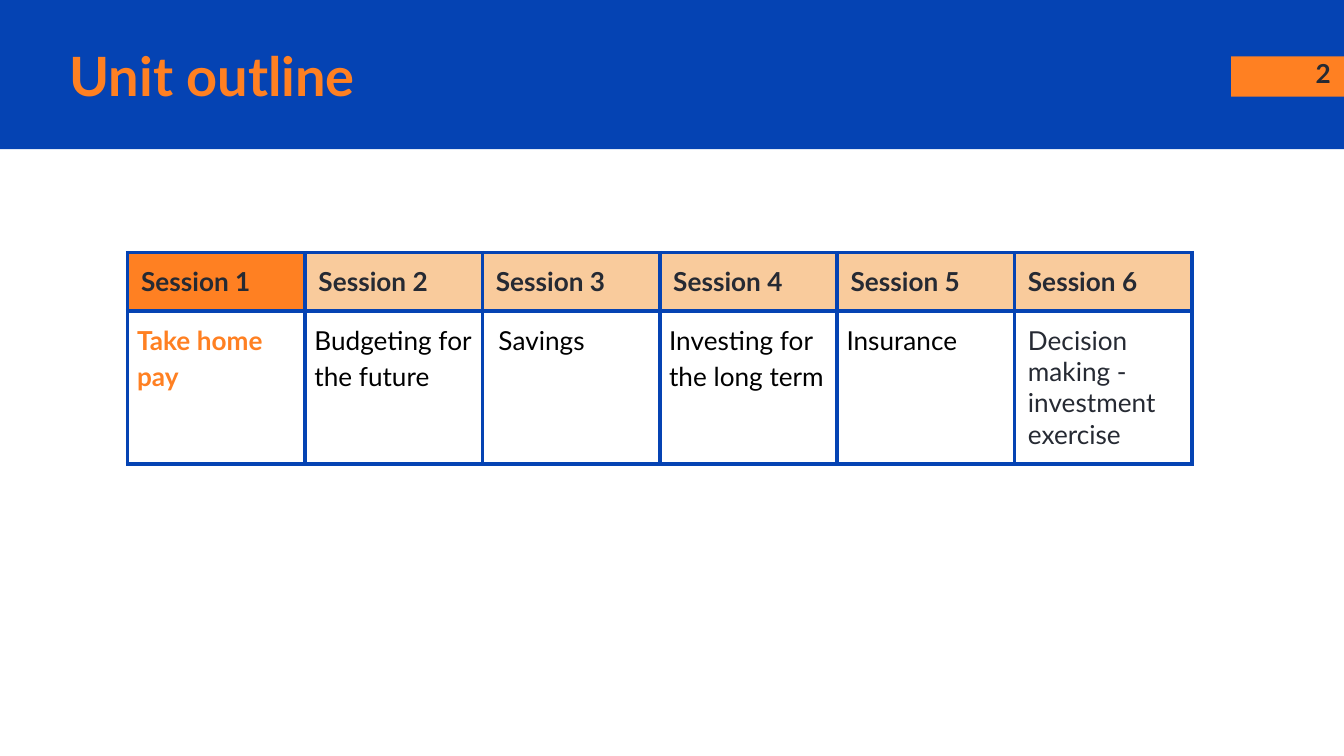
from dataclasses import dataclass

from lxml.etree import SubElement
from pptx import Presentation
from pptx.dml.color import RGBColor
from pptx.enum.shapes import MSO_SHAPE
from pptx.enum.text import MSO_ANCHOR, PP_ALIGN
from pptx.oxml.ns import qn
from pptx.util import Inches, Pt

WIDTH = 10
HEIGHT = WIDTH * 9 / 16
BLUE, ORANGE, PEACH, WHITE = "0543B3", "FF8022", "F9CB9C", "FFFFFF"
INK, BLACK = "262A33", "000000"
COLUMN_WIDTH, ROW_HEIGHTS = 1.32, (0.43, 1.14)
TABLE_LEFT, TABLE_TOP = 0.95, 1.88


@dataclass
class Session:
    topic: str
    color: str = BLACK
    header_fill: str = PEACH
    bold: bool = False
    inset: float = 0.07
    indent: float = 0
    spacing: float = 1.15


SESSIONS = [
    Session("Take home pay", ORANGE, ORANGE, bold=True),
    Session("Budgeting for the future"),
    Session("Savings", indent=0.05),
    Session("Investing for the long term"),
    Session("Insurance"),
    Session("Decision making - investment exercise", INK, inset=0.1, spacing=1),
]


def rgb(color: str) -> RGBColor:
    return RGBColor.from_string(color)


def write(holder, text: str, size: float, color: str, bold: bool = True,
          inset: float = 0.1, indent: float = 0, spacing: float = 1,
          align=PP_ALIGN.LEFT) -> None:
    """Put one styled paragraph into a text box or a table cell."""
    frame = holder.text_frame
    frame.text = text
    frame.word_wrap = True
    margins = holder if hasattr(holder, "margin_left") else frame
    margins.margin_left = Inches(inset + indent)
    margins.margin_right = margins.margin_top = margins.margin_bottom = Inches(inset)
    paragraph = frame.paragraphs[0]
    paragraph.alignment = align
    paragraph.line_spacing = spacing
    font = paragraph.runs[0].font
    font.name, font.size, font.bold = "Lato", Pt(size), bold
    font.color.rgb = rgb(color)


def add_bar(slide, left: float, top: float, width: float, height: float,
            color: str) -> None:
    bar = slide.shapes.add_shape(MSO_SHAPE.RECTANGLE, Inches(left), Inches(top),
                                 Inches(width), Inches(height))
    bar.shadow.inherit = False
    bar.fill.solid()
    bar.fill.fore_color.rgb = rgb(color)
    bar.line.fill.background()


def add_text(slide, left: float, top: float, width: float, height: float):
    return slide.shapes.add_textbox(Inches(left), Inches(top),
                                    Inches(width), Inches(height))


def style_cell(cell, fill: str) -> None:
    """Draw the four borders, then fill the cell."""
    properties = cell._tc.get_or_add_tcPr()
    for side in ("a:lnL", "a:lnR", "a:lnT", "a:lnB"):
        line = SubElement(properties, qn(side), w=str(Pt(2.25)))
        SubElement(SubElement(line, qn("a:solidFill")), qn("a:srgbClr"), val=BLUE)
    cell.fill.solid()
    cell.fill.fore_color.rgb = rgb(fill)


def add_outline(slide) -> None:
    table = slide.shapes.add_table(
        len(ROW_HEIGHTS), len(SESSIONS), Inches(TABLE_LEFT), Inches(TABLE_TOP),
        Inches(COLUMN_WIDTH * len(SESSIONS)), Inches(sum(ROW_HEIGHTS))).table
    table.first_row = table.horz_banding = False
    for row, height in zip(table.rows, ROW_HEIGHTS):
        row.height = Inches(height)
    for index, session in enumerate(SESSIONS):
        table.columns[index].width = Inches(COLUMN_WIDTH)
        header, topic = table.cell(0, index), table.cell(1, index)
        style_cell(header, session.header_fill)
        write(header, f"Session {index + 1}", 14, INK)
        style_cell(topic, WHITE)
        write(topic, session.topic, 14, session.color, session.bold,
              session.inset, session.indent, session.spacing)


def main() -> None:
    deck = Presentation()
    deck.slide_width, deck.slide_height = Inches(WIDTH), Inches(HEIGHT)
    slide = deck.slides.add_slide(deck.slide_layouts[6])

    # Header band and page number
    add_bar(slide, 0, 0, WIDTH, 1.11, BLUE)
    add_bar(slide, 9.16, 0.42, 0.84, 0.3, ORANGE)
    page_number = add_text(slide, 9.4, 0.33, 0.6, 0.43)
    write(page_number, "2", 14, INK, align=PP_ALIGN.RIGHT)

    # Title
    title = add_text(slide, 0.42, 0.28, 8.46, 0.56)
    write(title, "Unit outline", 29, ORANGE)
    title.text_frame.vertical_anchor = MSO_ANCHOR.MIDDLE

    # Sessions and their topics
    add_outline(slide)
    deck.save("out.pptx")


if __name__ == "__main__":
    main()
